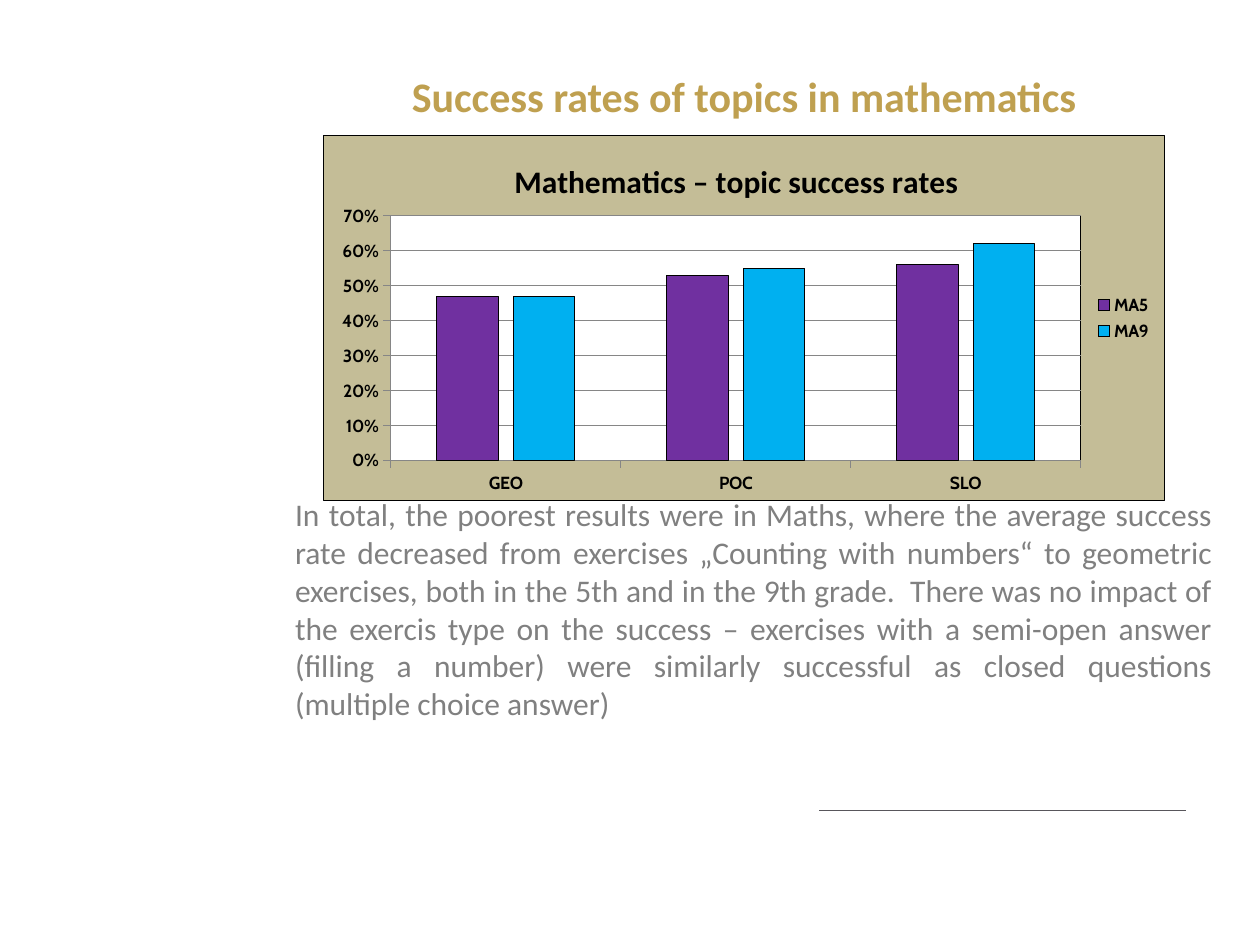
"""Build a slide on the success rates of mathematics topics."""
from lxml import etree
from pptx import Presentation
from pptx.chart.data import CategoryChartData
from pptx.dml.color import RGBColor
from pptx.enum import chart as charts, shapes, text
from pptx.oxml import ns, parse_xml
from pptx.util import Pt

GOLD = RGBColor(0xBF, 0xA0, 0x50)
GREY = RGBColor(0x80, 0x80, 0x80)
RULE = RGBColor(0x58, 0x56, 0x5B)
SAND = RGBColor(0xC4, 0xBD, 0x97)
PURPLE = RGBColor(0x70, 0x30, 0xA0)
BLUE = RGBColor(0x00, 0xB0, 0xF0)
AXIS = RGBColor(0x86, 0x86, 0x86)
BLACK = RGBColor(0, 0, 0)
WHITE = RGBColor(0xFF, 0xFF, 0xFF)

TITLE = "Success rates of topics in mathematics"
BODY = (
    "In total, the poorest results were in Maths, where the average success rate "
    "decreased from exercises „Counting with numbers“ to geometric exercises, both in "
    "the 5th and in the 9th grade.  There was no impact of the exercis type on the "
    "success – exercises with a semi-open answer (filling a number) were similarly "
    "successful as closed questions (multiple choice answer)"
)
TOPICS = ["GEO", "POC", "SLO"]
SERIES = [
    ("MA5", [0.47, 0.53, 0.56], PURPLE),
    ("MA9", [0.47, 0.55, 0.62], BLUE),
]


def style_font(font, size, color, bold=False, name="Calibri"):
    font.name, font.size, font.bold = name, Pt(size), bold
    font.color.rgb = color


def add_text(slide, box, content, size, color, alignment, anchor, bold=False):
    frame = slide.shapes.add_textbox(*map(Pt, box)).text_frame
    frame.word_wrap = True
    frame.vertical_anchor = anchor
    frame.text = content
    paragraph = frame.paragraphs[0]
    paragraph.alignment = alignment
    style_font(paragraph.runs[0].font, size, color, bold)


def add_rule(slide, left, right, top):
    line = slide.shapes.add_connector(
        shapes.MSO_CONNECTOR.STRAIGHT, Pt(right), Pt(top), Pt(left), Pt(top))
    line.line.color.rgb = RULE
    line.line.width = Pt(0.75)
    etree.SubElement(line._element.spPr, ns.qn("a:effectLst"))


def area_format(fill):
    return parse_xml(
        f'<c:spPr {ns.nsdecls("c", "a")}><a:solidFill><a:srgbClr val="{fill}"/></a:solidFill>'
        f'<a:ln w="{Pt(0.75)}"><a:solidFill><a:srgbClr val="{BLACK}"/></a:solidFill></a:ln></c:spPr>')


def set_layout(parent, index, **settings):
    for existing in parent.findall(ns.qn("c:layout")):
        parent.remove(existing)
    layout = etree.Element(ns.qn("c:layout"))
    manual = etree.SubElement(layout, ns.qn("c:manualLayout"))
    for tag, value in settings.items():
        etree.SubElement(manual, ns.qn(f"c:{tag}")).set("val", str(value))
    parent.insert(index, layout)


def style_axis(axis):
    style_font(axis.tick_labels.font, 10, BLACK, True, "Cabin")
    axis.major_tick_mark = charts.XL_TICK_MARK.OUTSIDE
    axis.minor_tick_mark = charts.XL_TICK_MARK.NONE
    axis.format.line.color.rgb = AXIS


def style_title(chart):
    chart.has_title = True
    frame = chart.chart_title.text_frame
    frame.text = "Mathematics – topic success rates"
    style_font(frame.paragraphs[0].runs[0].font, 18, BLACK, True)
    set_layout(chart.chart_title._element, 1, xMode="edge", yMode="edge", x=0.22, y=0.05)


def style_series(plot):
    plot.gap_width, plot.overlap = 150, -24
    plot.vary_by_categories = False
    for series, (_, _, color) in zip(plot.series, SERIES):
        series.format.fill.solid()
        series.format.fill.fore_color.rgb = color
        series.format.line.color.rgb = BLACK
        series.format.line.width = Pt(0.5)


def add_topic_chart(slide, box):
    data = CategoryChartData(number_format="0%")
    data.categories = TOPICS
    for name, values, _ in SERIES:
        data.add_series(name, values)
    chart = slide.shapes.add_chart(
        charts.XL_CHART_TYPE.COLUMN_CLUSTERED, *map(Pt, box), data).chart
    style_font(chart.font, 10, BLACK)
    style_title(chart)
    style_series(chart.plots[0])
    style_axis(chart.category_axis)
    values = chart.value_axis
    style_axis(values)
    values.minimum_scale, values.maximum_scale, values.major_unit = 0, 0.7, 0.1
    values.tick_labels.number_format = "0%"
    values.tick_labels.number_format_is_linked = False
    values.major_gridlines.format.line.color.rgb = AXIS
    chart.has_legend = True
    chart.legend.position = charts.XL_LEGEND_POSITION.RIGHT
    chart.legend.include_in_layout = False
    style_font(chart.legend.font, 10, BLACK, True, "Cabin")
    chart_element = chart._chartSpace.find(ns.qn("c:chart"))
    chart_element.addnext(area_format(SAND))
    plot_area = chart_element.find(ns.qn("c:plotArea"))
    plot_area.append(area_format(WHITE))
    set_layout(plot_area, 0, layoutTarget="inner", xMode="edge", yMode="edge",
               x=0.08, y=0.22, w=0.82, h=0.67)


def main():
    presentation = Presentation()
    presentation.slide_width, presentation.slide_height = Pt(720), Pt(540)
    slide = presentation.slides.add_slide(presentation.slide_layouts[6])
    add_rule(slide, 468, 677.5, 463)
    add_text(slide, (156, 26, 538.5, 57), TITLE, 24, GOLD,
             text.PP_ALIGN.CENTER, text.MSO_ANCHOR.MIDDLE, True)
    add_text(slide, (161.5, 279.5, 538.5, 177.5), BODY, 18, GREY,
             text.PP_ALIGN.JUSTIFY, text.MSO_ANCHOR.TOP)
    add_topic_chart(slide, (184.5, 77, 481.5, 209.5))
    presentation.save("out.pptx")


if __name__ == "__main__":
    main()
